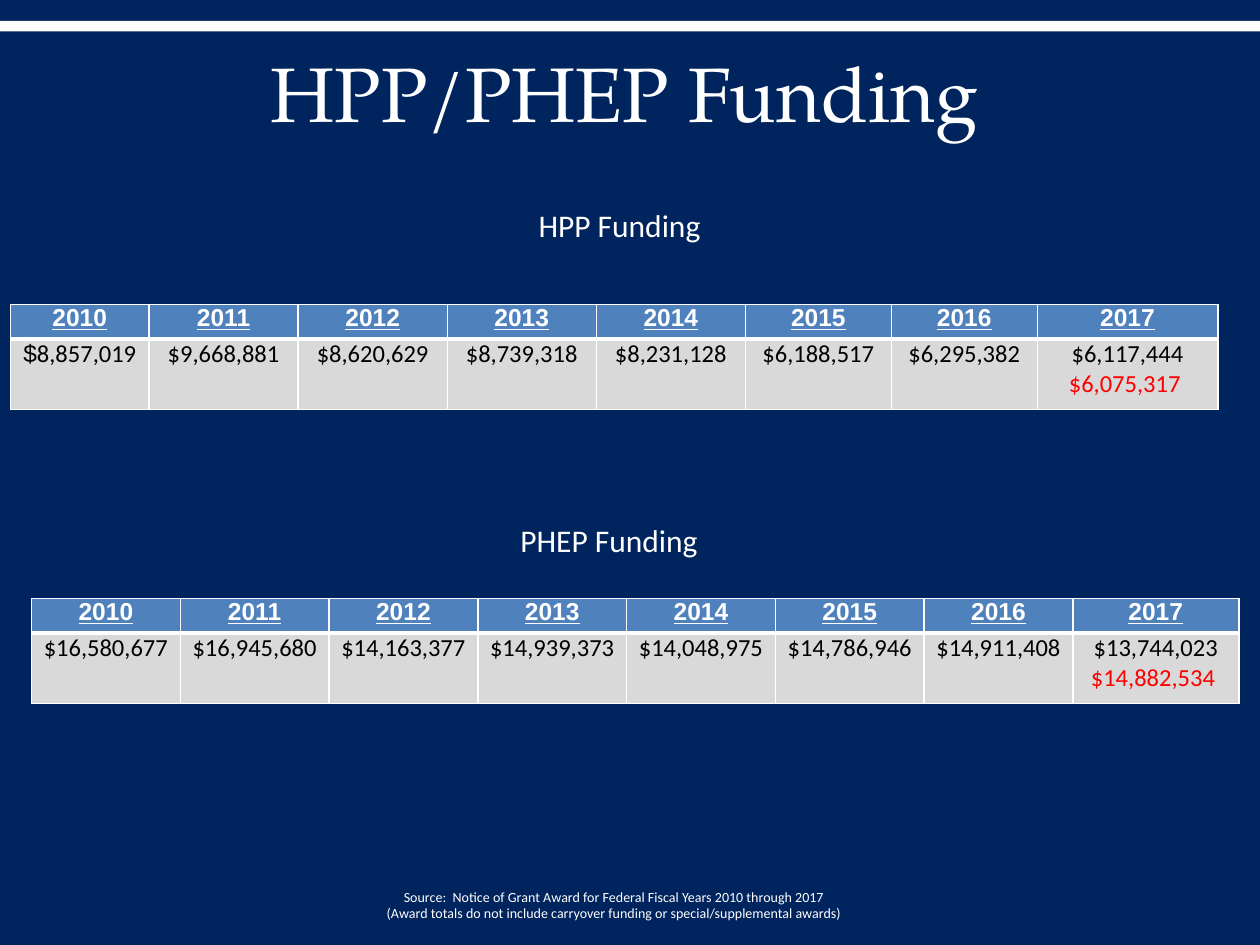
"""Build the HPP/PHEP funding slide with its two yearly award tables."""
import pptx
import pptx.dml.color
import pptx.enum.shapes
import pptx.enum.text
import pptx.oxml.ns
import pptx.util
import lxml.etree

THEME = {
    "navy": "00245D", "white": "FFFFFF", "black": "000000", "red": "FF0000",
    "header": "4F81BD", "body": "D9D9D9",
    "title_font": "TeX Gyre Pagella", "header_font": "Arial", "text_font": "Calibri",
    "title_size": 44, "heading_size": 18, "table_size": 14, "source_size": 8,
}
COLUMNS, ROWS = 120, 90
UNIT = pptx.util.Inches(10) / COLUMNS
YEARS = [str(year) for year in range(2010, 2018)]


def grid(*counts):
    return [pptx.util.Emu(round(count * UNIT)) for count in counts]


def write(text_frame, lines, font, size, colors, bold=None):
    text_frame.text = "\n".join(lines)
    for paragraph, color in zip(text_frame.paragraphs, colors):
        paragraph.alignment = pptx.enum.text.PP_ALIGN.CENTER
        paragraph.font.name = THEME[font]
        paragraph.font.size = pptx.util.Pt(THEME[size])
        paragraph.font.color.rgb = pptx.dml.color.RGBColor.from_string(THEME[color])
        paragraph.font.bold = bold
        paragraph.font.underline = bold


presentation = pptx.Presentation()
presentation.slide_width, presentation.slide_height = grid(COLUMNS, ROWS)
slide = presentation.slides.add_slide(presentation.slide_layouts[6])

for color, place in [("navy", (0, 0, COLUMNS, ROWS)), ("white", (0, 2, COLUMNS, 1))]:
    shape = slide.shapes.add_shape(pptx.enum.shapes.MSO_SHAPE.RECTANGLE, *grid(*place))
    shape.shadow.inherit = False
    shape.fill.solid()
    shape.fill.fore_color.rgb = pptx.dml.color.RGBColor.from_string(THEME[color])
    shape.line.fill.background()

texts = [
    ((2, 4.4, 115, 8.6), "title_font", "title_size", ["HPP/PHEP Funding"]),
    ((31, 19, 56, 4.8), "text_font", "heading_size", ["HPP Funding"]),
    ((24, 49, 68, 4.8), "text_font", "heading_size", ["PHEP Funding"]),
    ((18, 84, 81, 4.4), "text_font", "source_size", [
        "Source:  Notice of Grant Award for Federal Fiscal Years 2010 through 2017",
        "(Award totals do not include carryover funding or special/supplemental awards)",
    ]),
]
for place, font, size, lines in texts:
    text_frame = slide.shapes.add_textbox(*grid(*place)).text_frame
    text_frame.word_wrap = True
    if size == "title_size":
        text_frame.vertical_anchor = pptx.enum.text.MSO_ANCHOR.MIDDLE
    write(text_frame, lines, font, size, ["white"] * len(lines))

awards = [
    ((1, 29), [13.2] + [14.2] * 4 + [13.9] * 2 + [17.2],
     ["$8,857,019", "$9,668,881", "$8,620,629", "$8,739,318", "$8,231,128",
      "$6,188,517", "$6,295,382", "$6,117,444\n$6,075,317 "]),
    ((3, 57), [14.17] * 7 + [15.8],
     ["$16,580,677", "$16,945,680", "$14,163,377", "$14,939,373", "$14,048,975",
      "$14,786,946", "$14,911,408", "$13,744,023\n$14,882,534 "]),
]
tables = []
for (left, top), widths, amounts in awards:
    place = grid(left, top, sum(widths), 10)
    table = slide.shapes.add_table(2, len(YEARS), *place).table
    tables.append(table)
    table.first_row = table.horz_banding = False
    for column, width in zip(table.columns, grid(*widths)):
        column.width = width
    for row, height in zip(table.rows, grid(3.3, 6.7)):
        row.height = height
    for row_index, values in enumerate([YEARS, amounts]):
        is_header = row_index == 0
        for column_index, value in enumerate(values):
            cell = table.cell(row_index, column_index)
            cell.margin_left = cell.margin_right = pptx.util.Inches(0.07)
            cell.margin_top = cell.margin_bottom = 0
            write(cell.text_frame, value.split("\n"),
                  "header_font" if is_header else "text_font", "table_size",
                  ["white"] if is_header else ["black", "red"], is_header)
            properties = cell._tc.get_or_add_tcPr()
            for side in ("lnL", "lnR", "lnT", "lnB"):
                points = 3 if is_header and side == "lnB" else 1
                border = lxml.etree.SubElement(
                    properties, pptx.oxml.ns.qn(f"a:{side}"), w=str(pptx.util.Pt(points)))
                fill = lxml.etree.SubElement(border, pptx.oxml.ns.qn("a:solidFill"))
                lxml.etree.SubElement(fill, pptx.oxml.ns.qn("a:srgbClr"), val=THEME["white"])
            cell.fill.solid()
            cell.fill.fore_color.rgb = pptx.dml.color.RGBColor.from_string(
                THEME["header" if is_header else "body"])

paragraph = tables[0].cell(1, 0).text_frame.paragraphs[0]
dollar_sign = paragraph.runs[0]
amount = dollar_sign.text
dollar_sign.text = amount[0]
dollar_sign.font.name = THEME["header_font"]
paragraph.add_run().text = amount[1:]

presentation.save("out.pptx")
